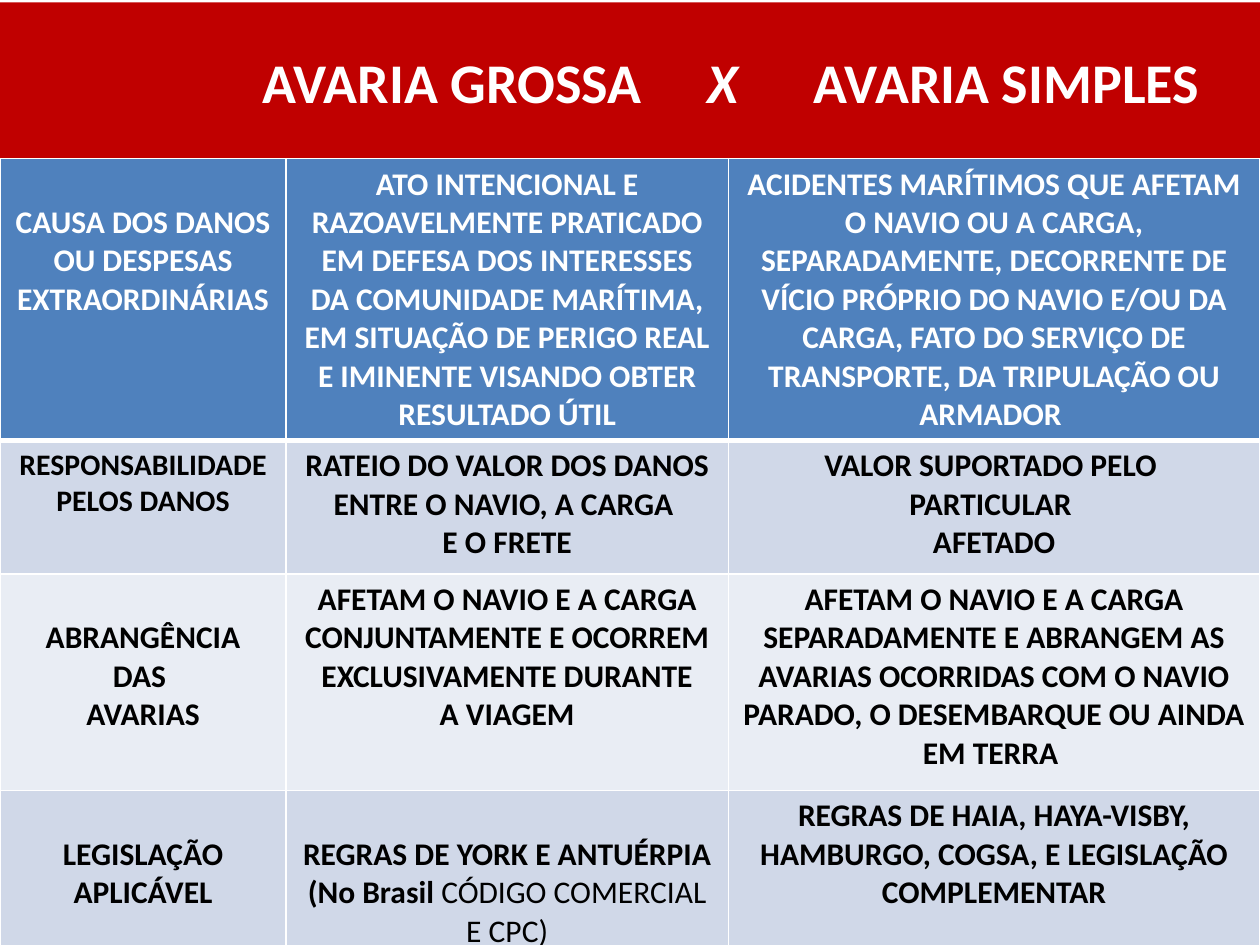
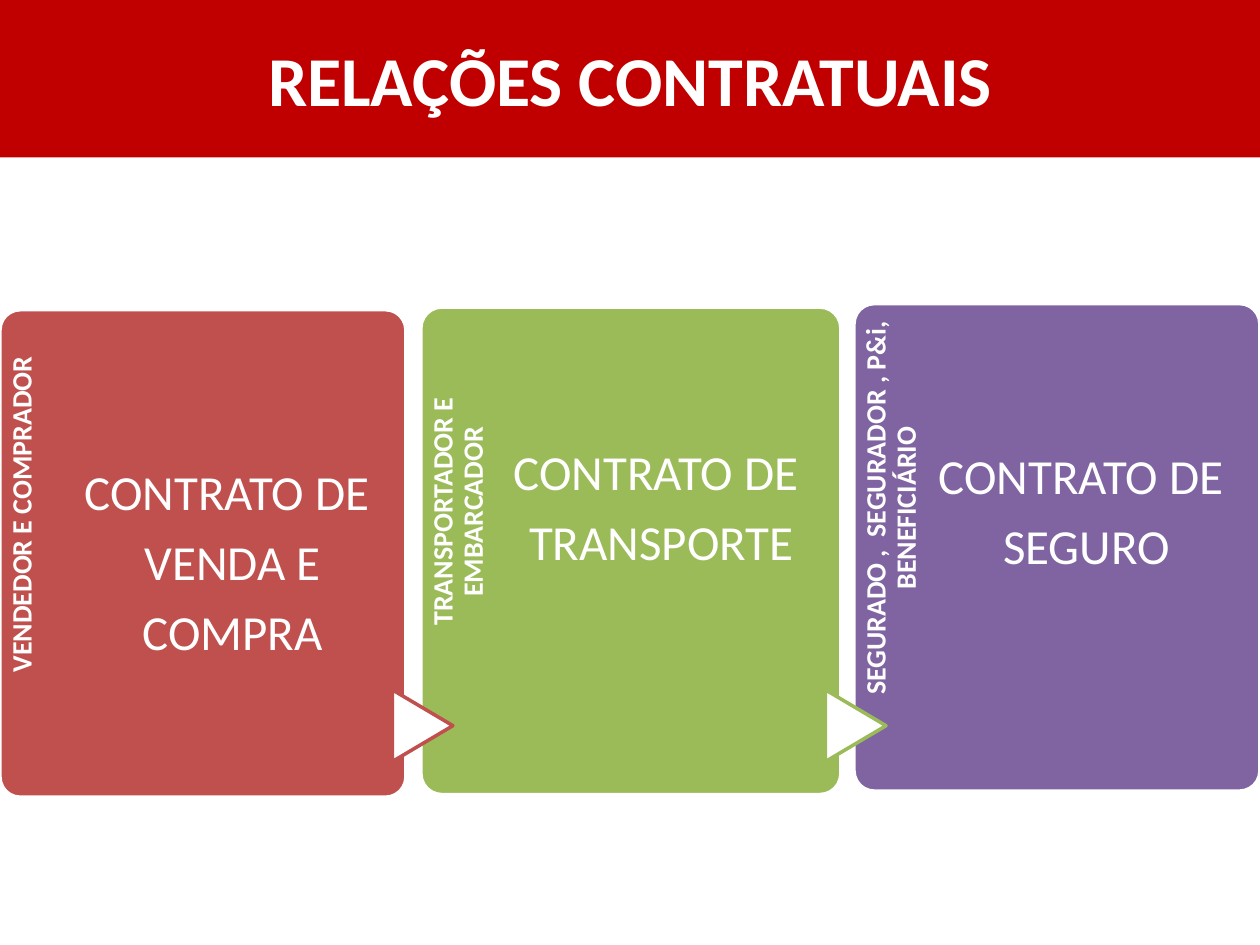
from dataclasses import dataclass
from itertools import pairwise

from lxml.etree import SubElement
from pptx import Presentation
from pptx.dml.color import RGBColor
from pptx.enum.shapes import MSO_SHAPE
from pptx.enum.text import MSO_ANCHOR, PP_ALIGN
from pptx.oxml.ns import qn
from pptx.util import Pt

COLORS = {
    "band": "C00000",
    "white": "FFFFFF",
    "black": "000000",
    "header": "4F81BD",
    "dark_row": "D0D8E8",
    "light_row": "E9EDF4",
    "sale": "C0504D",
    "transport": "9BBB59",
    "insurance": "8064A2",
}
FONT = "Calibri"
PAGE_WIDTH, PAGE_HEIGHT = 720, 540
BAND_HEIGHT = 90
TITLE_ONLY = 5


@dataclass(frozen=True)
class Entry:
    """One table cell: bold lines, with an optional regular tail on the last."""
    lines: tuple[str, ...]
    tail: str = ""
    size: float = 18
    lowered: bool = False


@dataclass(frozen=True)
class Row:
    height: float
    fill: str
    entries: tuple[Entry, ...]


@dataclass(frozen=True)
class Card:
    left: float
    top: float
    width: float
    color: str
    parties: str
    lines: tuple[str, ...]
    text_inset: float = 90.5


COLUMN_WIDTHS = (163.5, 252.7, 303.8)
ROWS = (
    Row(154.8, "header", (
        Entry(("CAUSA DOS DANOS OU DESPESAS EXTRAORDINÁRIAS",), lowered=True),
        Entry(("ATO INTENCIONAL E RAZOAVELMENTE PRATICADO",
               "EM DEFESA DOS INTERESSES",
               "DA COMUNIDADE MARÍTIMA, EM SITUAÇÃO DE PERIGO REAL E IMINENTE "
               "VISANDO OBTER RESULTADO ÚTIL")),
        Entry(("ACIDENTES MARÍTIMOS QUE AFETAM O NAVIO OU A CARGA, SEPARADAMENTE, "
               "DECORRENTE DE VÍCIO PRÓPRIO DO NAVIO E/OU DA CARGA, FATO DO SERVIÇO "
               "DE TRANSPORTE, DA TRIPULAÇÃO OU ARMADOR ",)),
    )),
    Row(76.3, "dark_row", (
        Entry(("RESPONSABILIDADE", "PELOS DANOS"), size=17),
        Entry(("RATEIO DO VALOR DOS DANOS ENTRE O NAVIO, A CARGA ", "E O FRETE")),
        Entry(("VALOR SUPORTADO PELO ", "PARTICULAR ", "AFETADO")),
    )),
    Row(123.8, "light_row", (
        Entry(("ABRANGÊNCIA", "DAS ", "AVARIAS"), lowered=True),
        Entry(("AFETAM O NAVIO E A CARGA CONJUNTAMENTE E OCORREM "
               "EXCLUSIVAMENTE DURANTE", "A VIAGEM")),
        Entry(("AFETAM O NAVIO E A CARGA SEPARADAMENTE E ABRANGEM AS AVARIAS "
               "OCORRIDAS COM O NAVIO PARADO, O DESEMBARQUE OU AINDA EM TERRA ",)),
    )),
    Row(92.9, "dark_row", (
        Entry(("LEGISLAÇÃO", "APLICÁVEL"), lowered=True),
        Entry(("REGRAS DE YORK E ANTUÉRPIA (No Brasil ",),
              tail="CÓDIGO COMERCIAL E CPC)", lowered=True),
        Entry(("REGRAS DE HAIA, HAYA-VISBY, HAMBURGO, COGSA, E LEGISLAÇÃO "
               "COMPLEMENTAR",)),
    )),
)

CARDS = (
    Card(0, 177, 232, "sale", "VENDEDOR E COMPRADOR",
         ("CONTRATO DE ", "VENDA E", "COMPRA")),
    Card(240.5, 175.5, 240, "transport", "TRANSPORTADOR E EMBARCADOR",
         ("CONTRATO DE ", "TRANSPORTE")),
    Card(488, 173.5, 232, "insurance", "SEGURADO ,  SEGURADOR , P&i, BENEFICIÁRIO",
         ("CONTRATO DE ", "SEGURO"), text_inset=99),
)
CARD_HEIGHT = 278.6
LABEL_LENGTH = 228
ARROW_WIDTH, ARROW_HEIGHT, ARROW_MIDDLE = 41, 34.6, 414.7


def rgb(name: str) -> RGBColor:
    return RGBColor.from_string(COLORS[name])


def add_run(para, text: str, size: float, color: str,
            bold: bool = False, italic: bool = False) -> None:
    span = para.add_run()
    span.text = text
    font = span.font
    font.name, font.size, font.bold, font.italic = FONT, Pt(size), bold, italic
    font.color.rgb = rgb(color)


def set_insets(frame, left: float, top: float, right: float, bottom: float) -> None:
    frame.margin_left, frame.margin_top = Pt(left), Pt(top)
    frame.margin_right, frame.margin_bottom = Pt(right), Pt(bottom)


def next_paragraph(frame, index: int):
    """Return the paragraph that a new frame starts with, then added ones."""
    return frame.add_paragraph() if index else frame.paragraphs[0]


def add_titled_page(deck, top: float = 0):
    """Add a page with the red title band; return it with its title paragraph."""
    page = deck.slides.add_slide(deck.slide_layouts[TITLE_ONLY])
    title = page.shapes.title
    title.left, title.top = Pt(0), Pt(top)
    title.width, title.height = Pt(PAGE_WIDTH), Pt(BAND_HEIGHT)
    title.fill.solid()
    title.fill.fore_color.rgb = rgb("band")
    title.text_frame.vertical_anchor = MSO_ANCHOR.MIDDLE
    title.text_frame.word_wrap = True
    para = title.text_frame.paragraphs[0]
    para.alignment = PP_ALIGN.CENTER
    return page, para


def add_tab_stops(para, positions: tuple[float, ...]) -> None:
    stops = SubElement(para._p.get_or_add_pPr(), qn("a:tabLst"))
    for position in positions:
        SubElement(stops, qn("a:tab"), pos=str(Pt(position)), algn="l")


def set_borders(cell, top: float, bottom: float) -> None:
    properties = cell._tc.get_or_add_tcPr()
    for side, width in (("L", 1), ("R", 1), ("T", top), ("B", bottom)):
        line = SubElement(properties, qn(f"a:ln{side}"), w=str(Pt(width)))
        fill = SubElement(line, qn("a:solidFill"))
        SubElement(fill, qn("a:srgbClr"), val=COLORS["white"])


def fill_cell(cell, entry: Entry, row_fill: str, row_index: int) -> None:
    set_borders(cell, top=3 if row_index == 1 else 1, bottom=1 if row_index else 3)
    cell.fill.solid()
    cell.fill.fore_color.rgb = rgb(row_fill)
    cell.margin_top = Pt(25.6 if entry.lowered else 3.6)
    color = "black" if row_index else "white"
    for index, line in enumerate(entry.lines):
        para = next_paragraph(cell.text_frame, index)
        para.alignment = PP_ALIGN.CENTER
        add_run(para, line, entry.size, color, bold=True)
    if entry.tail:
        add_run(para, entry.tail, entry.size, color)


def add_comparison_page(deck) -> None:
    page, para = add_titled_page(deck, top=1.4)
    set_insets(page.shapes.title.text_frame, 150, 3.6, 0, 3.6)
    para.alignment = PP_ALIGN.LEFT
    add_tab_stops(para, (254, 315))
    add_run(para, "AVARIA GROSSA\t", 32, "white", bold=True)
    add_run(para, "X", 32, "white", bold=True, italic=True)
    add_run(para, "\tAVARIA SIMPLES", 32, "white", bold=True)

    table = page.shapes.add_table(
        len(ROWS), len(COLUMN_WIDTHS), Pt(0), Pt(90.7), Pt(PAGE_WIDTH),
        Pt(sum(row.height for row in ROWS))).table
    for column, width in zip(table.columns, COLUMN_WIDTHS):
        column.width = Pt(width)
    for row_index, row in enumerate(ROWS):
        table.rows[row_index].height = Pt(row.height)
        for column_index, entry in enumerate(row.entries):
            fill_cell(table.cell(row_index, column_index), entry, row.fill, row_index)


def add_filled_shape(page, kind, left: float, top: float, width: float,
                     height: float, fill: str, line: str):
    shape = page.shapes.add_shape(kind, Pt(left), Pt(top), Pt(width), Pt(height))
    shape.shadow.inherit = False
    shape.fill.solid()
    shape.fill.fore_color.rgb = rgb(fill)
    shape.line.color.rgb = rgb(line)
    shape.line.width = Pt(2)
    return shape


def add_card_text(page, left: float, top: float, width: float, height: float,
                  lines: tuple[str, ...], size: float, bold: bool = False):
    box = page.shapes.add_textbox(Pt(left), Pt(top), Pt(width), Pt(height))
    box.text_frame.word_wrap = True
    for index, line in enumerate(lines):
        para = next_paragraph(box.text_frame, index)
        para.alignment = PP_ALIGN.CENTER
        para.line_spacing = 0.9
        para.space_after = Pt(0.35 * size)
        add_run(para, line, size, "white", bold)
    return box


def add_card(page, card: Card) -> None:
    """Draw a card with the parties up its left side and the contract name."""
    shape = add_filled_shape(page, MSO_SHAPE.ROUNDED_RECTANGLE, card.left, card.top,
                             card.width, CARD_HEIGHT, card.color, "white")
    shape.adjustments[0] = 0.05

    strip = 0.2 * card.width
    label = add_card_text(page, card.left + (strip - LABEL_LENGTH) / 2,
                          card.top + (LABEL_LENGTH - strip) / 2,
                          LABEL_LENGTH, strip, (card.parties,), 16, bold=True)
    label.rotation = 270
    set_insets(label.text_frame, 0, 4.3, 5.8, 0)

    name = add_card_text(page, card.left + strip, card.top, 0.745 * card.width,
                         CARD_HEIGHT, card.lines, 28)
    set_insets(name.text_frame, 0, card.text_inset, 0, 0)


def add_contracts_page(deck) -> None:
    page, para = add_titled_page(deck)
    add_run(para, "RELAÇÕES CONTRATUAIS", 40, "white", bold=True)
    for card in CARDS:
        add_card(page, card)
    for source, target in pairwise(CARDS):
        arrow = add_filled_shape(
            page, MSO_SHAPE.FLOWCHART_EXTRACT, target.left + 1 - ARROW_WIDTH / 2,
            ARROW_MIDDLE - ARROW_HEIGHT / 2, ARROW_WIDTH, ARROW_HEIGHT,
            "white", source.color)
        arrow.rotation = 90


def main() -> None:
    deck = Presentation()
    deck.slide_width, deck.slide_height = Pt(PAGE_WIDTH), Pt(PAGE_HEIGHT)
    add_comparison_page(deck)
    add_contracts_page(deck)
    deck.save("out.pptx")


if __name__ == "__main__":
    main()
